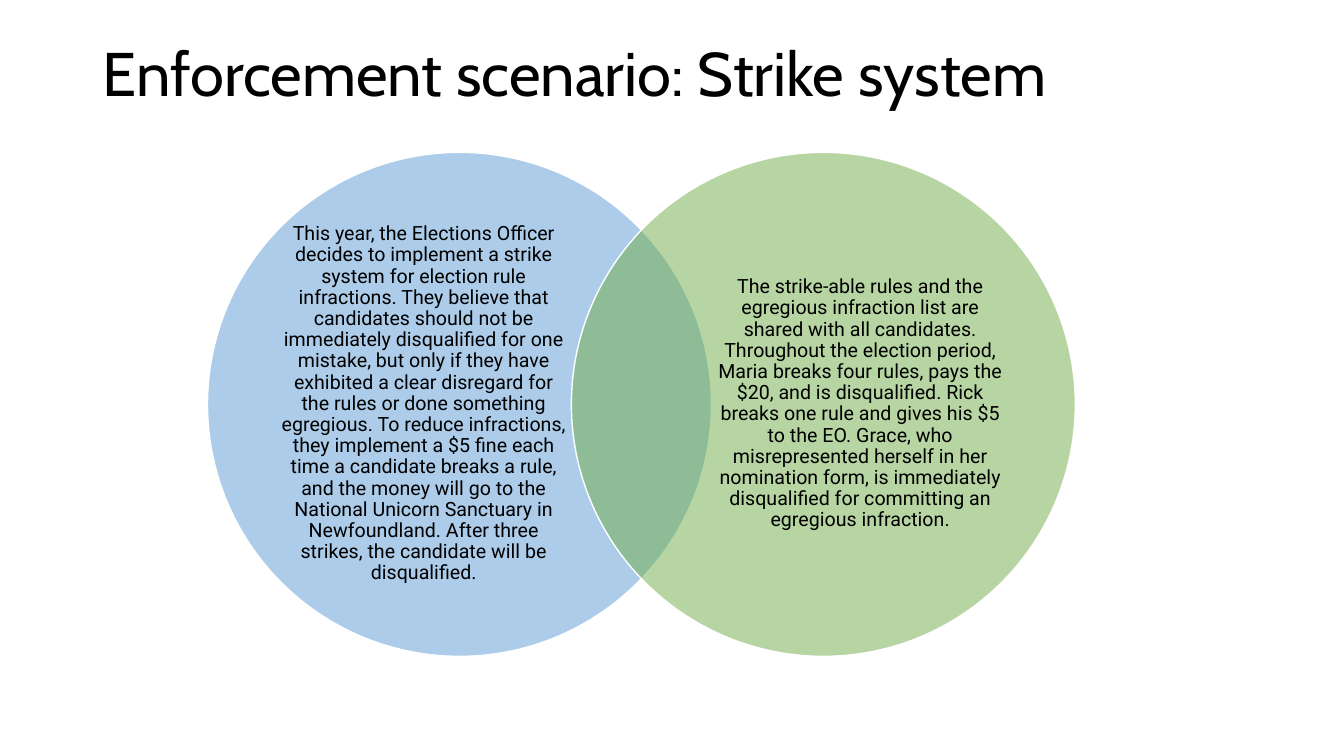
from lxml.etree import SubElement
from pptx import Presentation
from pptx.dml.color import RGBColor
from pptx.enum.shapes import MSO_SHAPE
from pptx.enum.text import MSO_ANCHOR, PP_ALIGN
from pptx.oxml.ns import qn
from pptx.util import Cm, Pt

COLORS = {"text": "000000", "outline": "FFFFFF", "policy": "5B9BD5", "outcome": "70AD47"}

POLICY = (
    "This year, the Elections Officer decides to implement a strike system for "
    "election rule infractions. They believe that candidates should not be "
    "immediately disqualified for one mistake, but only if they have exhibited a "
    "clear disregard for the rules or done something egregious. To reduce "
    "infractions, they implement a $5 fine each time a candidate breaks a rule, "
    "and the money will go to the National Unicorn Sanctuary in Newfoundland. "
    "After three strikes, the candidate will be disqualified."
)
OUTCOME = (
    "The strike-able rules and the egregious infraction list are shared with all "
    "candidates. Throughout the election period, Maria breaks four rules, pays "
    "the $20, and is disqualified. Rick breaks one rule and gives his $5 to the "
    "EO. Grace, who misrepresented herself in her nomination form, is immediately "
    "disqualified for committing an egregious infraction."
)


def add_text(slide, box, text, font, size, align, inset=None):
    frame = slide.shapes.add_textbox(*[Cm(v) for v in box]).text_frame
    frame.word_wrap = True
    frame.vertical_anchor = MSO_ANCHOR.MIDDLE
    if inset is not None:
        frame.margin_left = frame.margin_right = Cm(inset)
        frame.margin_top = frame.margin_bottom = Cm(inset)
    paragraph = frame.paragraphs[0]
    paragraph.alignment = align
    paragraph.line_spacing = 0.9
    run = paragraph.add_run()
    run.text = text
    run.font.name = font
    run.font.size = Pt(size)
    run.font.color.rgb = RGBColor.from_string(COLORS["text"])


prs = Presentation()
prs.slide_width = Cm(33.87)
prs.slide_height = Cm(19.05)
slide = prs.slides.add_slide(prs.slide_layouts[6])

# Title
add_text(slide, (2.34, 0.1, 27.69, 3.68), "Enforcement scenario: Strike system",
         "Cabin", 44, PP_ALIGN.LEFT)

# Overlapping half-transparent circles, each with its text
for color, circle_left, text_left, text in [
    ("policy", 5.23, 7.01, POLICY),
    ("outcome", 14.4, 18.01, OUTCOME),
]:
    circle = slide.shapes.add_shape(
        MSO_SHAPE.OVAL, Cm(circle_left), Cm(3.84), Cm(12.7), Cm(12.7))
    circle.shadow.inherit = False
    circle.fill.solid()
    circle.fill.fore_color.rgb = RGBColor.from_string(COLORS[color])
    fill_color = circle.fill._xPr.find(qn("a:solidFill"))[0]
    SubElement(fill_color, qn("a:alpha"), val="50000")
    circle.line.color.rgb = RGBColor.from_string(COLORS["outline"])
    circle.line.width = Pt(1)
    add_text(slide, (text_left, 5.33, 7.34, 9.7), text, "Roboto", 14, PP_ALIGN.CENTER, 0)

prs.save("out.pptx")
